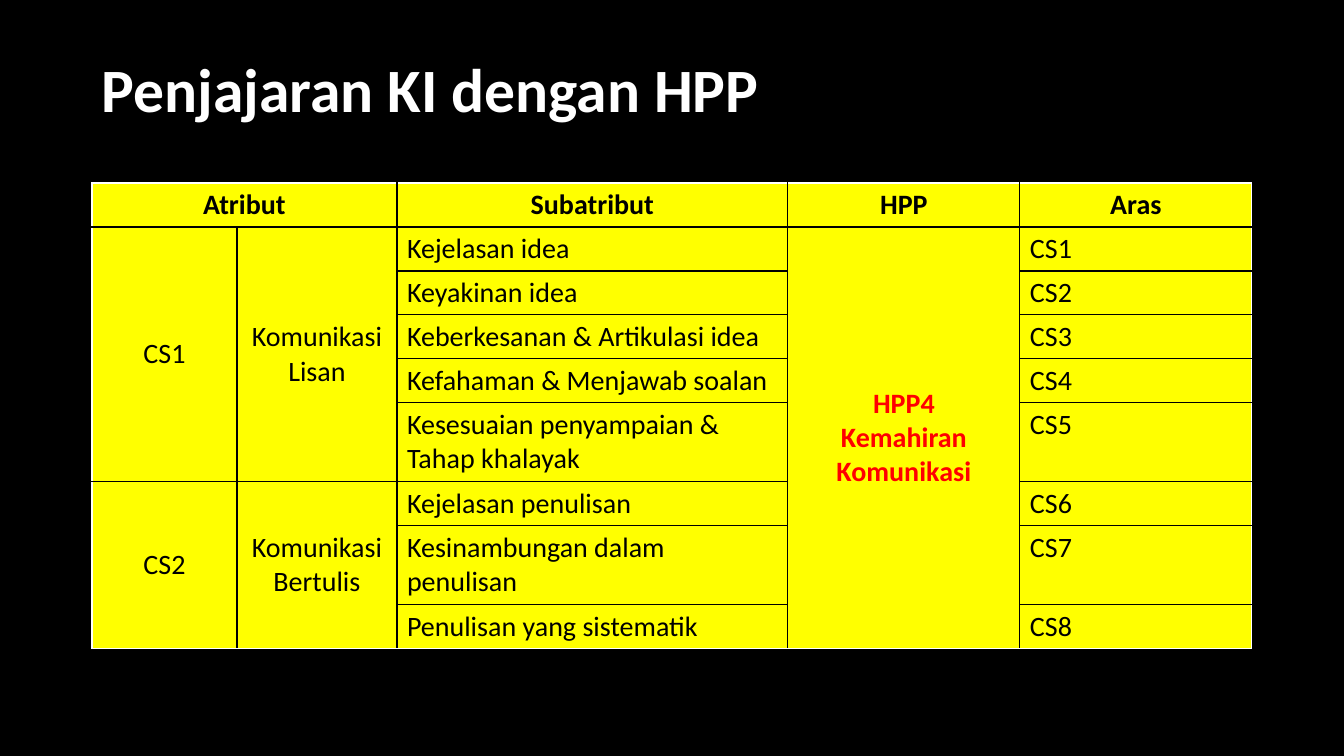
"""Builds the slide that aligns KI attributes with HPP."""
from lxml import etree
from pptx import Presentation, util as u
from pptx.dml.color import RGBColor
from pptx.enum import text
from pptx.oxml import ns

TITLE = "Penjajaran KI dengan HPP"
HEADERS = [(0, 2, "Atribut"), (2, 1, "Subatribut"), (3, 1, "HPP"), (4, 1, "Aras")]
ATTRIBUTES = [
    ("CS1", "Komunikasi Lisan", [
        "Kejelasan idea",
        "Keyakinan idea",
        "Keberkesanan & Artikulasi idea",
        "Kefahaman & Menjawab soalan",
        "Kesesuaian penyampaian & Tahap khalayak",
    ]),
    ("CS2", "Komunikasi Bertulis", [
        "Kejelasan penulisan",
        "Kesinambungan dalam penulisan",
        "Penulisan yang sistematik",
    ]),
]
HPP = "HPP4\nKemahiran Komunikasi"

COLORS = {"black": "000000", "white": "FFFFFF", "yellow": "FFFF00", "red": "FF0000"}
FONT = "Calibri"
PX = 914400 / 100.8
SLIDE = (1344, 756)
TITLE_BOX = (92, 40, 1160, 105)
TABLE_AT = (92, 183)
COLUMNS = [145, 160, 391, 232, 232]
ROWS = [44, 44, 44, 44, 44, 79, 44, 79, 44]
NO_STYLE = "{2D5ABB26-0587-4C30-8999-92F81FD0307C}"


def px(*lengths):
    return [u.Emu(round(length * PX)) for length in lengths]


def rgb(name):
    return RGBColor.from_string(COLORS[name])


def format_text(frame, size, color, bold, align):
    for paragraph in frame.paragraphs:
        paragraph.alignment = align
        for run in paragraph.runs:
            run.font.name = FONT
            run.font.size = u.Pt(size)
            run.font.bold = bold
            run.font.color.rgb = rgb(color)


def add_borders(cell, outer_sides):
    properties = cell._tc.get_or_add_tcPr()
    for side in "LRTB":
        line = etree.SubElement(properties, ns.qn(f"a:ln{side}"), w=str(u.Pt(1)))
        fill = etree.SubElement(line, ns.qn("a:solidFill"))
        color = COLORS["white" if side in outer_sides else "black"]
        etree.SubElement(fill, ns.qn("a:srgbClr"), val=color)


def fill_cell(table, row, column, words, rows=1, columns=1,
              centred=True, bold=False, color="black"):
    cell = table.cell(row, column)
    if rows * columns > 1:
        cell.merge(table.cell(row + rows - 1, column + columns - 1))
    edges = {"L": column == 0, "R": column + columns == len(COLUMNS),
             "T": row == 0, "B": row + rows == len(ROWS)}
    add_borders(cell, [side for side, outer in edges.items() if outer])
    cell.fill.solid()
    cell.fill.fore_color.rgb = rgb("yellow")
    cell.text_frame.text = words
    anchors = text.MSO_ANCHOR
    cell.vertical_anchor = anchors.MIDDLE if rows > 1 else anchors.TOP
    align = text.PP_ALIGN.CENTER if centred else text.PP_ALIGN.LEFT
    format_text(cell.text_frame, 20, color, bold, align)


def add_title(slide):
    frame = slide.shapes.add_textbox(*px(*TITLE_BOX)).text_frame
    frame.word_wrap = True
    frame.vertical_anchor = text.MSO_ANCHOR.MIDDLE
    frame.text = TITLE
    frame.paragraphs[0].line_spacing = 0.9
    format_text(frame, 44, "white", True, text.PP_ALIGN.LEFT)


def add_alignment_table(slide):
    bounds = px(*TABLE_AT, sum(COLUMNS), sum(ROWS))
    table = slide.shapes.add_table(len(ROWS), len(COLUMNS), *bounds).table
    table.first_row = table.horz_banding = False
    table._tbl.tblPr.find(ns.qn("a:tableStyleId")).text = NO_STYLE
    for column, width in zip(table.columns, px(*COLUMNS)):
        column.width = width
    for row, height in zip(table.rows, px(*ROWS)):
        row.height = height

    for column, span, words in HEADERS:
        fill_cell(table, 0, column, words, columns=span, bold=True)
    fill_cell(table, 1, 3, HPP, rows=len(ROWS) - 1, bold=True, color="red")
    row = 1
    for code, attribute, subattributes in ATTRIBUTES:
        fill_cell(table, row, 0, code, rows=len(subattributes))
        fill_cell(table, row, 1, attribute, rows=len(subattributes))
        for subattribute in subattributes:
            fill_cell(table, row, 2, subattribute, centred=False)
            fill_cell(table, row, 4, f"CS{row}", centred=False)
            row += 1


def main():
    deck = Presentation()
    deck.slide_width, deck.slide_height = px(*SLIDE)
    slide = deck.slides.add_slide(deck.slide_layouts[6])
    slide.background.fill.solid()
    slide.background.fill.fore_color.rgb = rgb("black")
    add_title(slide)
    add_alignment_table(slide)
    deck.save("out.pptx")


if __name__ == "__main__":
    main()
